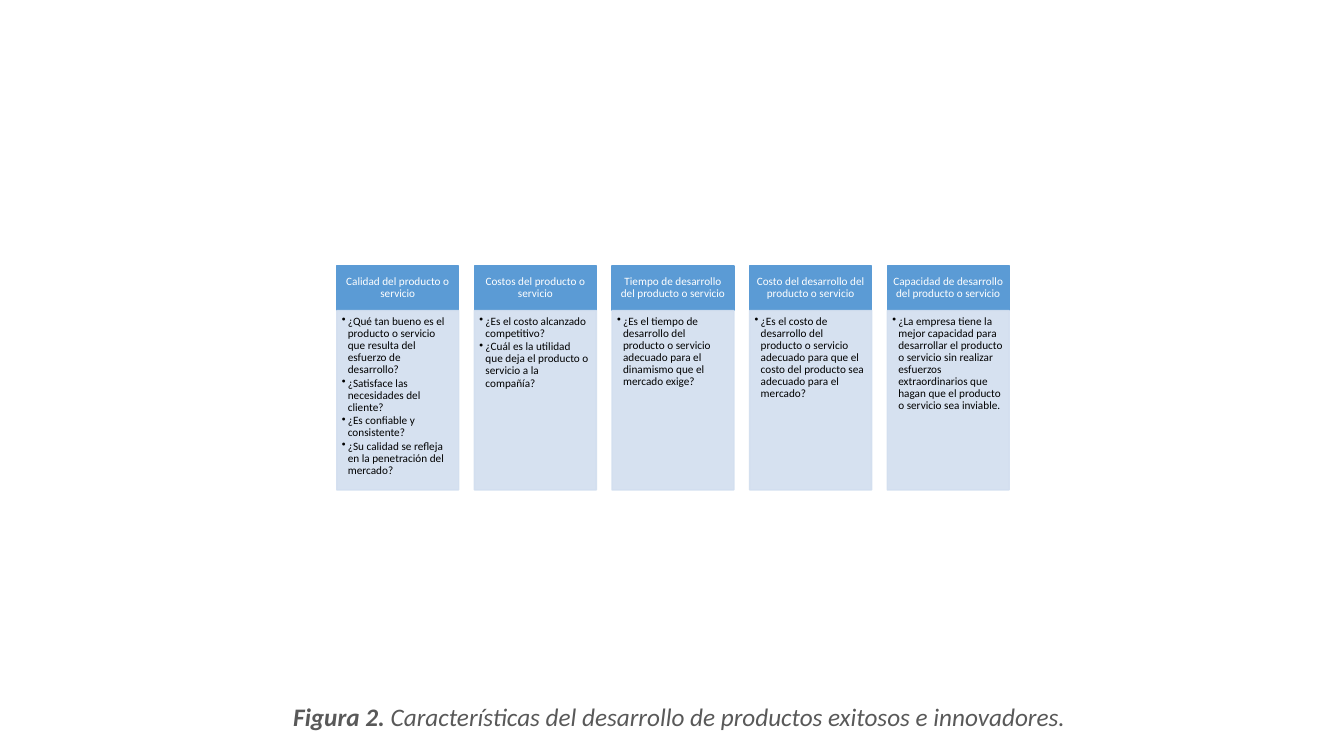
"""Build a slide with five columns of product development traits and a caption."""
import pptx
import pptx.util
import pptx.dml.color
import pptx.enum.shapes
import pptx.enum.text
import pptx.oxml
import pptx.oxml.ns
from lxml import etree

Inches = pptx.util.Inches
Pt = pptx.util.Pt
qn = pptx.oxml.ns.qn
ALIGN = pptx.enum.text.PP_ALIGN
ANCHOR = pptx.enum.text.MSO_ANCHOR


def paint(target, color):
    target.rgb = pptx.dml.color.RGBColor.from_string(color)


def add_box(left, top, height, color, texts, ink, insets, after):
    box = slide.shapes.add_shape(
        pptx.enum.shapes.MSO_SHAPE.RECTANGLE,
        Inches(left), Inches(top), Inches(1.21), Inches(height))
    box.shadow.inherit = False
    box.fill.solid()
    paint(box.fill.fore_color, color)
    paint(box.line.color, color)
    box.line.width = Pt(1)
    frame = box.text_frame
    frame.word_wrap = True
    frame.margin_left, frame.margin_top, frame.margin_right, frame.margin_bottom = map(Inches, insets)
    for index, text in enumerate(texts):
        para = frame.add_paragraph() if index else frame.paragraphs[0]
        para.text = text
        para.line_spacing = 0.9
        para.space_after = Pt(after)
        para.font.name = "Calibri"
        para.font.size = Pt(8)
        paint(para.font.color, ink)
    return box


columns = [
    ("Calidad del producto o servicio", [
        "¿Qué tan bueno es el producto o servicio que resulta del esfuerzo de desarrollo?",
        "¿Satisface las necesidades del cliente?",
        "¿Es confiable y consistente?",
        "¿Su calidad se refleja en la penetración del mercado?"]),
    ("Costos del producto o servicio", [
        "¿Es el costo alcanzado competitivo?",
        "¿Cuál es la utilidad que deja el producto o servicio a la compañía?"]),
    ("Tiempo de desarrollo del producto o servicio", [
        "¿Es el tiempo de desarrollo del producto o servicio adecuado para el "
        "dinamismo que el mercado exige?"]),
    ("Costo del desarrollo del producto o servicio", [
        "¿Es el costo de desarrollo del producto o servicio adecuado para que el "
        "costo del producto sea adecuado para el mercado?"]),
    ("Capacidad de desarrollo del producto o servicio", [
        "¿La empresa tiene la mejor capacidad para desarrollar el producto o servicio "
        "sin realizar esfuerzos extraordinarios que hagan que el producto o servicio "
        "sea inviable."]),
]

deck = pptx.Presentation()
deck.slide_width = Inches(13.33)
deck.slide_height = Inches(7.5)
slide = deck.slides.add_slide(deck.slide_layouts[6])

caption = slide.shapes.add_textbox(Inches(2.81), Inches(6.91), Inches(8.09), Inches(0.4))
caption.text_frame.word_wrap = True
para = caption.text_frame.paragraphs[0]
para.font.name = "Calibri"
para.font.size = Pt(18)
para.font.italic = True
paint(para.font.color, "595959")
label = para.add_run()
label.text = "Figura 2. "
label.font.bold = True
para.add_run().text = "Características del desarrollo de productos exitosos e innovadores."

for number, (title, points) in enumerate(columns):
    left = 3.34 + number * 1.365
    header = add_box(left, 2.64, 0.44, "5B9BD5", [title], "FFFFFF", (0.06, 0.04, 0.06, 0.04), 2.8)
    header.text_frame.vertical_anchor = ANCHOR.MIDDLE
    header.text_frame.paragraphs[0].alignment = ALIGN.CENTER

    body = add_box(left, 3.08, 1.78, "D2DEEF", points, "000000", (0.05, 0.05, 0.06, 0.07), 1.2)
    body.text_frame.vertical_anchor = ANCHOR.TOP
    for tint in body.element.spPr.iter(qn("a:srgbClr")):
        etree.SubElement(tint, qn("a:alpha")).set("val", "90000")
    for para in body.text_frame.paragraphs:
        para.alignment = ALIGN.LEFT
        para.level = 1
        props = para._p.get_or_add_pPr()
        props.set("marL", str(Inches(0.06)))
        props.set("indent", str(Inches(-0.06)))
        bullet = pptx.oxml.parse_xml(
            '<a:buChar xmlns:a="http://schemas.openxmlformats.org/drawingml/2006/main" char="•"/>')
        props.find(qn("a:defRPr")).addprevious(bullet)

deck.save("out.pptx")
